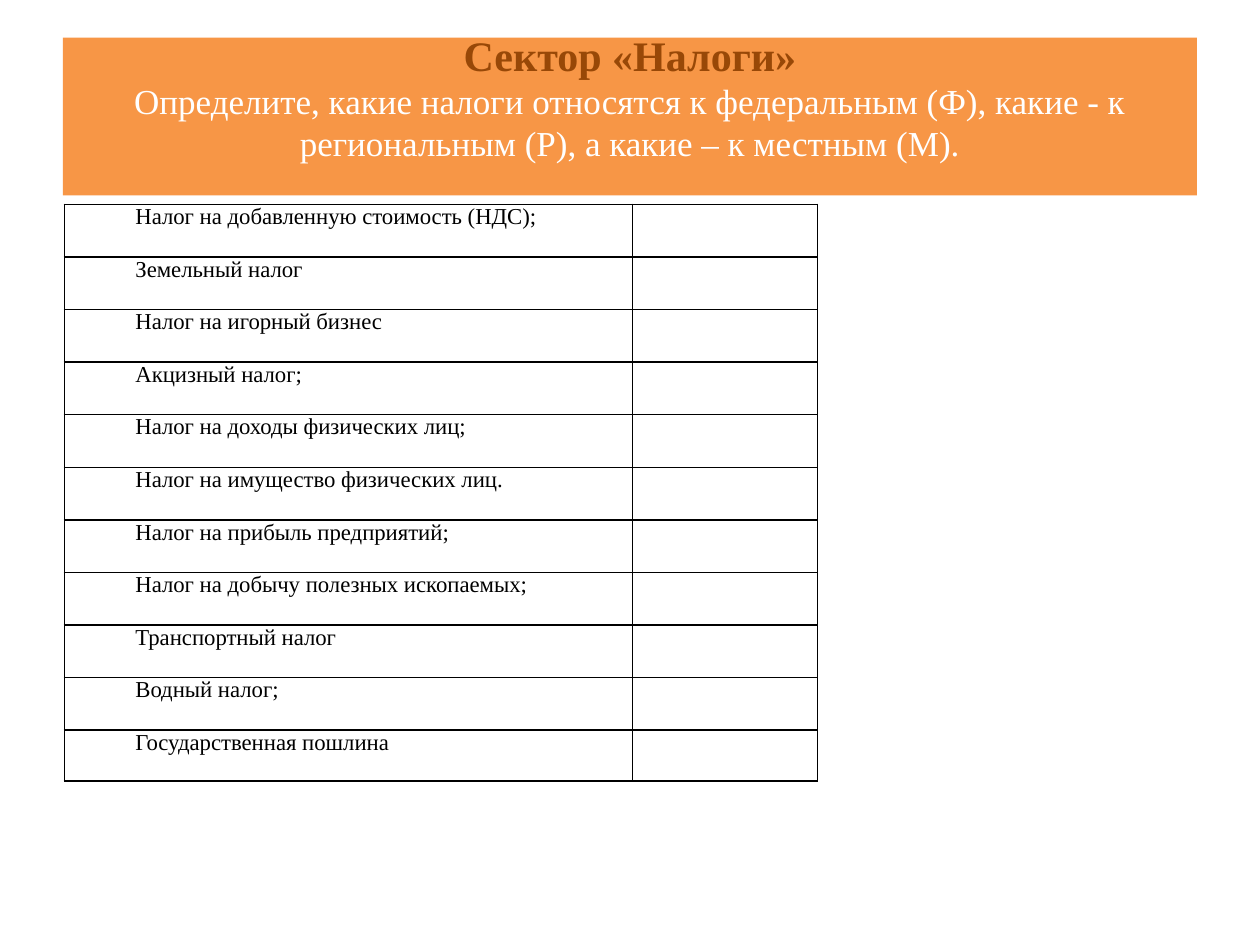
from dataclasses import dataclass

from lxml import etree
from pptx import Presentation
from pptx.dml.color import RGBColor
from pptx.enum import shapes, text
from pptx.oxml import ns
from pptx.util import Cm, Pt


@dataclass(frozen=True)
class Theme:
    font: str = "Times New Roman"
    banner: str = "F79646"
    heading: str = "984807"
    task: str = "FFFFFF"
    ink: str = "000000"
    heading_size: int = 24
    task_size: int = 20
    cell_size: int = 13
    border: float = 1


THEME = Theme()
TAXES = [
    "Налог на добавленную стоимость (НДС);",
    "Земельный налог",
    "Налог на игорный бизнес",
    "Акцизный налог;",
    "Налог на доходы физических лиц;",
    "Налог на имущество физических лиц.",
    "Налог на прибыль предприятий;",
    "Налог на добычу полезных ископаемых;",
    "Транспортный налог",
    "Водный налог;",
    "Государственная пошлина",
]


def add_span(para, words, size, color, bold=False):
    span = para.add_run()
    span.text = words
    span.font.name = THEME.font
    span.font.size = Pt(size)
    span.font.bold = bold
    span.font.color.rgb = RGBColor.from_string(color)


def add_banner(page, left, top, width, height):
    box = page.shapes.add_shape(
        shapes.MSO_SHAPE.RECTANGLE, left, top, width, height)
    box.shadow.inherit = False
    box.fill.solid()
    box.fill.fore_color.rgb = RGBColor.from_string(THEME.banner)
    box.line.fill.background()
    frame = box.text_frame
    frame.word_wrap = True
    frame.vertical_anchor = text.MSO_ANCHOR.MIDDLE
    frame.margin_top, frame.margin_bottom = 0, Cm(0.8)
    para = frame.paragraphs[0]
    para.alignment = text.PP_ALIGN.CENTER
    add_span(para, "Сектор «Налоги»", THEME.heading_size, THEME.heading, True)
    para.add_line_break()
    add_span(para, "Определите, какие налоги относятся к федеральным (Ф), "
             "какие - к региональным (Р), а какие – к местным (М).",
             THEME.task_size, THEME.task)


def style_cell(cell):
    """Give the cell a thin border on every side and no fill."""
    props = cell._tc.get_or_add_tcPr()
    for side in ("lnL", "lnR", "lnT", "lnB"):
        line = etree.SubElement(
            props, ns.qn(f"a:{side}"), w=str(Pt(THEME.border)))
        fill = etree.SubElement(line, ns.qn("a:solidFill"))
        etree.SubElement(fill, ns.qn("a:srgbClr"), val=THEME.ink)
    cell.fill.background()
    cell.margin_left = cell.margin_right = Cm(0.18)
    cell.margin_top = cell.margin_bottom = 0


def add_tax_table(page, left, top, width, row_height):
    answer_width = Cm(3.73)
    table = page.shapes.add_table(
        len(TAXES), 2, left, top, width, row_height * len(TAXES)).table
    table.first_row = table.horz_banding = False
    table.columns[0].width = width - answer_width
    table.columns[1].width = answer_width
    for row, tax in zip(table.rows, TAXES):
        row.height = row_height
        for cell in row.cells:
            style_cell(cell)
        para = row.cells[0].text_frame.paragraphs[0]
        para.alignment = text.PP_ALIGN.JUSTIFY
        props = para._p.get_or_add_pPr()
        props.set("marL", "0")
        props.set("indent", str(Cm(1.25)))
        add_span(para, tax, THEME.cell_size, THEME.ink)
    table.rows[len(TAXES) - 1].height = Cm(1.02)


def main():
    deck = Presentation()
    deck.slide_width, deck.slide_height = Cm(25.4), Cm(19.05)
    page = deck.slides.add_slide(deck.slide_layouts[6])
    add_banner(page, Cm(1.27), Cm(0.76), Cm(22.86), Cm(3.18))
    add_tax_table(page, Cm(1.3), Cm(4.12), Cm(15.18), Cm(1.06))
    deck.save("out.pptx")


if __name__ == "__main__":
    main()
